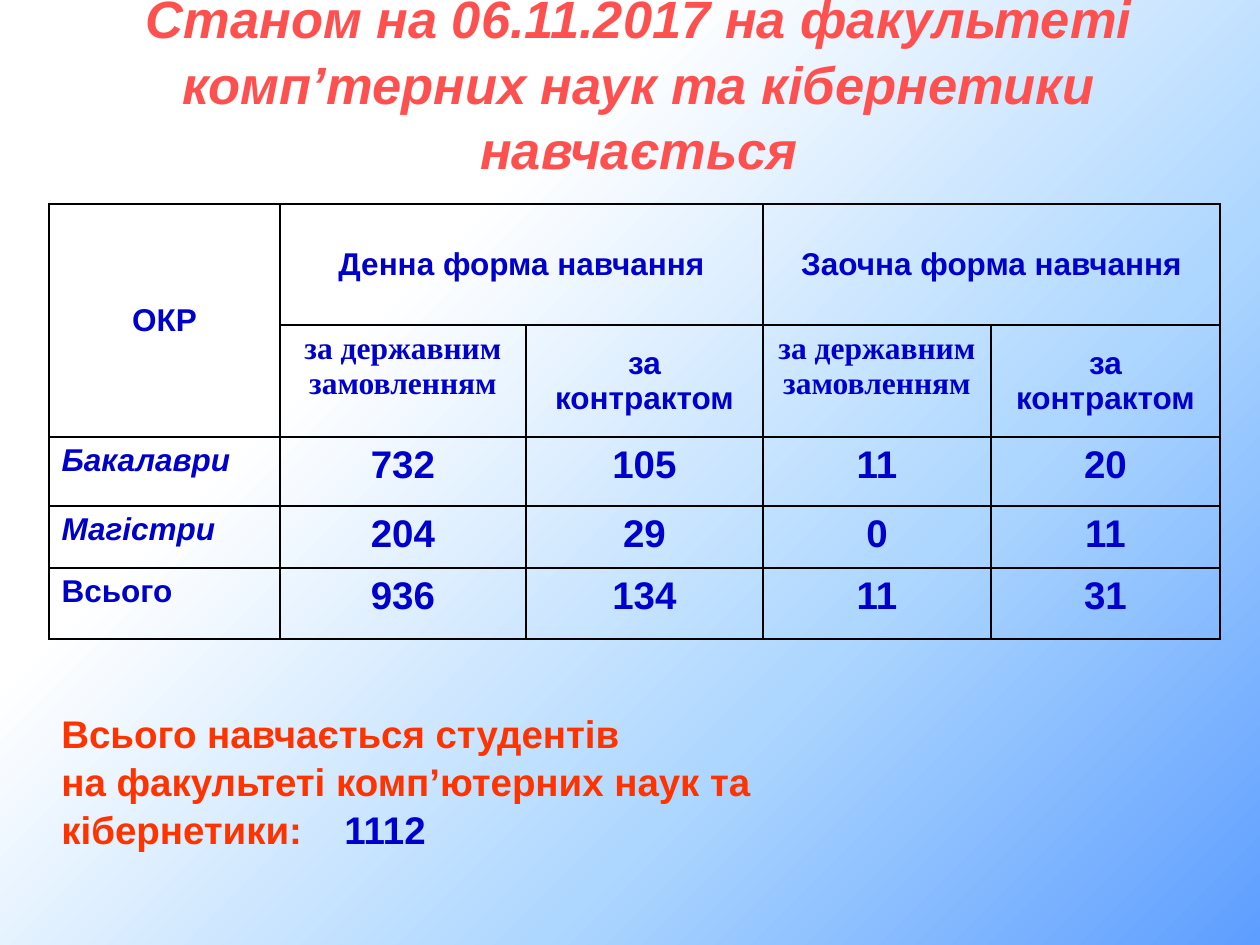
from dataclasses import dataclass

from lxml import etree
from pptx import Presentation
from pptx.dml.color import RGBColor
from pptx.enum.text import MSO_ANCHOR, MSO_AUTO_SIZE, PP_ALIGN
from pptx.oxml import parse_xml
from pptx.oxml.ns import nsdecls, qn
from pptx.util import Emu, Pt

LEFT, CENTER = PP_ALIGN.LEFT, PP_ALIGN.CENTER
TOP, MIDDLE = MSO_ANCHOR.TOP, MSO_ANCHOR.MIDDLE
NO_AUTOFIT = MSO_AUTO_SIZE.NONE
PX_PER_INCH = 126
HANGING = 48


@dataclass(frozen=True)
class Theme:
    blue: str = "0000CC"
    coral: str = "FF5050"
    orange: str = "FF3300"
    border: str = "000000"
    sans: str = "Arial"
    serif: str = "Times New Roman"
    title_size: int = 30
    figure_size: int = 22
    label_size: int = 18
    line_spacing: float = 1.04
    # position %, colour, opacity %
    gradient: tuple = ((0, "5E9EFF", 52), (33, "AED7FF", 70),
                       (69, "FFFFFF", 100), (100, "FFFFFF", 0))


THEME = Theme()


@dataclass(frozen=True)
class Style:
    size: int = THEME.label_size
    color: str = THEME.blue
    font: str = THEME.sans
    italic: bool = False
    align: PP_ALIGN = CENTER
    anchor: MSO_ANCHOR = TOP
    hanging: bool = True


@dataclass(frozen=True)
class Entry:
    row: int
    column: int
    text: str
    style: Style
    rows: int = 1
    columns: int = 1


HEADING = Style(anchor=MIDDLE)
STATE_FUNDED = Style(font=THEME.serif)
CONTRACT = Style(anchor=MIDDLE, hanging=False)
DEGREE = Style(italic=True, align=LEFT)
TOTAL = Style(align=LEFT)
FIGURE = Style(size=THEME.figure_size)
TITLE = Style(size=THEME.title_size, color=THEME.coral, italic=True, hanging=False)
SUMMARY = Style(size=THEME.figure_size, color=THEME.orange, align=LEFT, hanging=False)

COLUMN_WIDTHS = (231, 246, 237, 228, 229)
ROW_HEIGHTS = (121, 112, 69, 62, 71)
HEADINGS = [
    Entry(0, 0, "ОКР", HEADING, rows=2),
    Entry(0, 1, "Денна форма навчання", HEADING, columns=2),
    Entry(0, 3, "Заочна форма навчання", HEADING, columns=2),
]
STUDENTS = (
    ("Бакалаври", DEGREE, (732, 105, 11, 20)),
    ("Магістри", DEGREE, (204, 29, 0, 11)),
    ("Всього", TOTAL, (936, 134, 11, 31)),
)


def px(length: int) -> Emu:
    return Emu(round(length * 914400 / PX_PER_INCH))


def format_span(span, style: Style) -> None:
    font = span.font
    font.name, font.size = style.font, Pt(style.size)
    font.bold, font.italic = True, style.italic
    font.color.rgb = RGBColor.from_string(style.color)


def write(text_frame, text: str, style: Style) -> None:
    text_frame.text = text
    for para in text_frame.paragraphs:
        para.alignment = style.align
        if style.hanging:
            properties = para._p.get_or_add_pPr()
            properties.set("marL", str(px(HANGING)))
            properties.set("indent", str(-px(HANGING)))
        for span in para.runs:
            format_span(span, style)


def place(box, left: int, top: int, width: int, height: int) -> None:
    box.left, box.top = px(left), px(top)
    box.width, box.height = px(width), px(height)


def write_box(box, text: str, style: Style) -> None:
    frame = box.text_frame
    frame.word_wrap, frame.auto_size = True, NO_AUTOFIT
    frame.vertical_anchor = MIDDLE
    write(frame, text, style)
    for para in frame.paragraphs:
        para.line_spacing = THEME.line_spacing


def paint_background(page) -> None:
    stops = "".join(
        f'<a:gs pos="{position * 1000}"><a:srgbClr val="{color}">'
        f'<a:alpha val="{opacity * 1000}"/></a:srgbClr></a:gs>'
        for position, color, opacity in THEME.gradient)
    page._element.cSld.insert(0, parse_xml(
        f'<p:bg {nsdecls("p", "a")}><p:bgPr><a:gradFill rotWithShape="0">'
        f'<a:gsLst>{stops}</a:gsLst><a:path path="circle">'
        '<a:fillToRect l="100000" t="100000"/></a:path></a:gradFill>'
        '<a:effectLst/></p:bgPr></p:bg>'))


def outline(cell) -> None:
    properties = cell._tc.get_or_add_tcPr()
    for position, side in enumerate(("lnL", "lnR", "lnT", "lnB")):
        properties.insert(position, parse_xml(
            f'<a:{side} {nsdecls("a")} w="{Pt(1)}"><a:solidFill>'
            f'<a:srgbClr val="{THEME.border}"/></a:solidFill></a:{side}>'))


def table_entries() -> list[Entry]:
    entries = list(HEADINGS)
    for column in (1, 3):
        entries += [Entry(1, column, "за державним\nзамовленням", STATE_FUNDED),
                    Entry(1, column + 1, "за контрактом", CONTRACT)]
    for row, (label, style, counts) in enumerate(STUDENTS, start=2):
        entries.append(Entry(row, 0, label, style))
        entries += [Entry(row, column, str(count), FIGURE)
                    for column, count in enumerate(counts, start=1)]
    return entries


def add_student_table(page) -> None:
    table = page.shapes.add_table(
        len(ROW_HEIGHTS), len(COLUMN_WIDTHS), px(49), px(204),
        px(sum(COLUMN_WIDTHS)), px(sum(ROW_HEIGHTS))).table
    table.first_row = table.horz_banding = False
    for column, width in zip(table.columns, COLUMN_WIDTHS):
        column.width = px(width)
    for row, height in zip(table.rows, ROW_HEIGHTS):
        row.height = px(height)
    for cell in table.iter_cells():
        cell.fill.background()
        outline(cell)
    for entry in table_entries():
        cell = table.cell(entry.row, entry.column)
        if entry.rows * entry.columns > 1:
            cell.merge(table.cell(entry.row + entry.rows - 1,
                                  entry.column + entry.columns - 1))
        cell.vertical_anchor = entry.style.anchor
        write(cell.text_frame, entry.text, entry.style)


def add_summary(page) -> None:
    box = page.shapes.add_textbox(0, 0, 0, 0)
    place(box, 49, 704, 735, 152)
    write_box(box, "Всього навчається студентів\n"
                   "на факультеті комп’ютерних наук та кібернетики:", SUMMARY)
    para = box.text_frame.paragraphs[-1]
    tabs = etree.SubElement(para._p.get_or_add_pPr(), qn("a:tabLst"))
    etree.SubElement(tabs, qn("a:tab"), pos=str(px(283)), algn="l")
    total = para.add_run()
    total.text = "\t1112"
    format_span(total, FIGURE)


def main() -> None:
    deck = Presentation()
    deck.slide_width, deck.slide_height = px(1260), px(945)
    page = deck.slides.add_slide(deck.slide_layouts.get_by_name("Title Only"))
    paint_background(page)
    add_student_table(page)
    title = page.shapes.title
    place(title, 59, -20, 1160, 204)
    write_box(title, "Станом на 06.11.2017 на факультеті комп’терних наук "
                     "та кібернетики навчається", TITLE)
    add_summary(page)
    deck.save("out.pptx")


if __name__ == "__main__":
    main()
